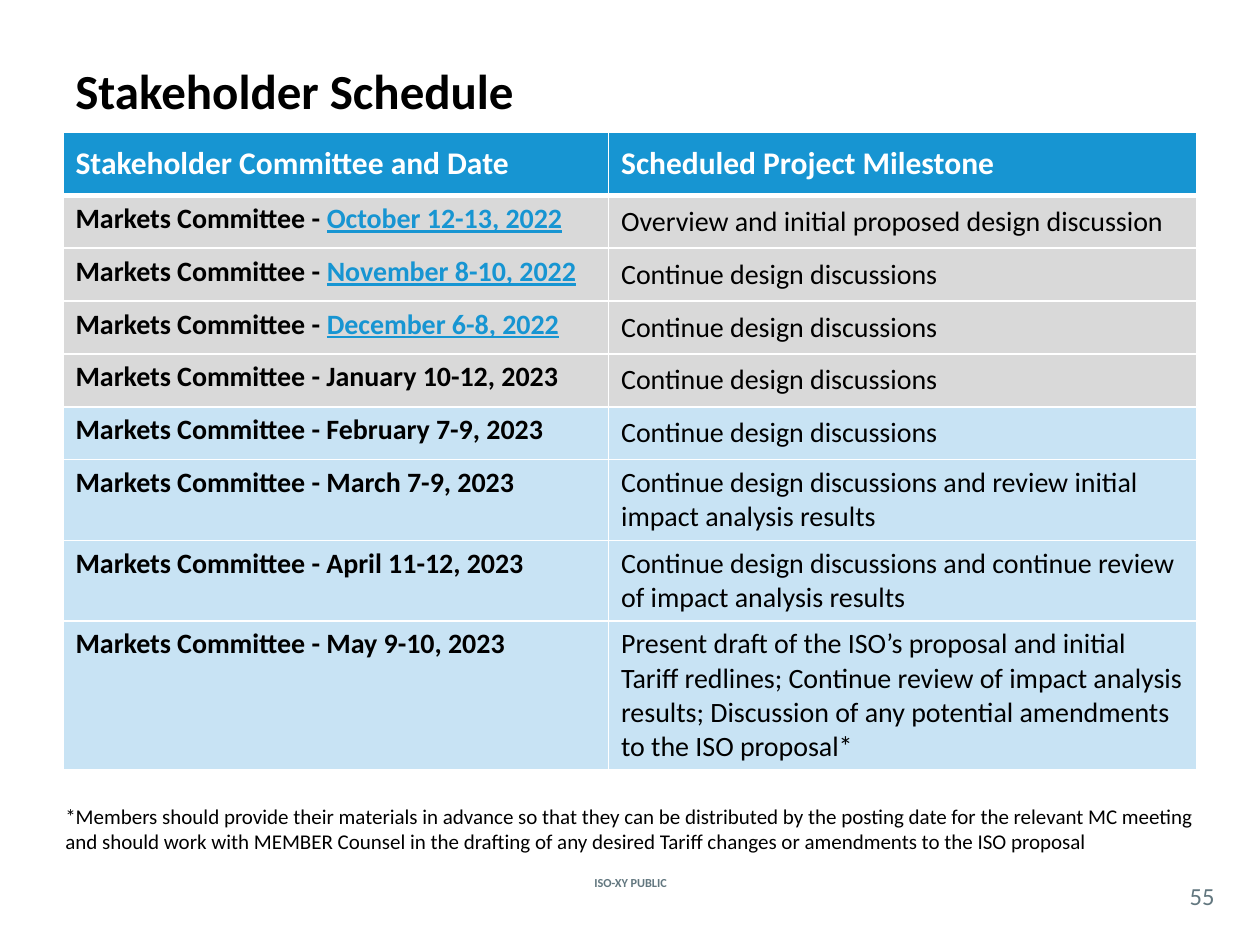
from lxml.etree import SubElement
from pptx import Presentation
from pptx.dml.color import RGBColor as Rgb
from pptx.enum.text import MSO_ANCHOR as Anchor, PP_ALIGN as Align
from pptx.oxml.ns import qn
from pptx.util import Inches, Pt

HUES = {
    "black": "000000", "white": "FFFFFF", "blue": "1795D2",
    "pale": "C8E3F4", "gray": "D9D9D9", "slate": "62777F",
}
HEADS = ["Stakeholder Committee and Date", "Scheduled Project Milestone"]
LEAD = "Markets Committee - "
TALK = "Continue design discussions"
ROWS = [
    ("October 12-13, 2022", "Overview and initial proposed design discussion", 0.42),
    ("November 8-10, 2022", TALK, 0.42),
    ("December 6-8, 2022", TALK, 0.42),
    ("January 10-12, 2023", TALK, 0.42),
    ("February 7-9, 2023", TALK, 0.42),
    ("March 7-9, 2023", TALK + " and review initial impact analysis results", 0.64),
    ("April 11-12, 2023", TALK + " and continue review of impact analysis results", 0.64),
    ("May 9-10, 2023", "Present draft of the ISO’s proposal and initial Tariff redlines; "
     "Continue review of impact analysis results; Discussion of any potential "
     "amendments to the ISO proposal*", 1.18),
]
LINKED, PAST = 3, 4
NOTE = (
    "*Members should provide their materials in advance so that they can be "
    "distributed by the posting date for the relevant MC meeting and should work "
    "with MEMBER Counsel in the drafting of any desired Tariff changes or "
    "amendments to the ISO proposal"
)


class Deck:
    face = "Calibri"

    def __init__(self, wide, high):
        self.prs = Presentation()
        self.prs.slide_width, self.prs.slide_height = Inches(wide), Inches(high)
        self.slide = self.prs.slides.add_slide(self.prs.slide_layouts[6])

    def run(self, para, text, size, hue="black", **form):
        run = para.add_run()
        run.text = text
        for key, value in {"name": self.face, "size": Pt(size), **form}.items():
            setattr(run.font, key, value)
        run.font.color.rgb = Rgb.from_string(HUES[hue])

    def text(self, spot, words, size, hue="black", align=Align.LEFT,
             anchor=Anchor.MIDDLE, inset=None, **form):
        frame = self.slide.shapes.add_textbox(*map(Inches, spot)).text_frame
        frame.word_wrap = True
        frame.vertical_anchor = anchor
        if inset is not None:
            for side in ("left", "top", "right", "bottom"):
                setattr(frame, "margin_" + side, Inches(inset))
        para = frame.paragraphs[0]
        para.alignment = align
        self.run(para, words, size, hue, **form)

    def grid(self, left, top, cols, rows):
        table = self.slide.shapes.add_table(
            len(rows), len(cols), Inches(left), Inches(top),
            Inches(sum(cols)), Inches(sum(rows))).table
        for col, wide in zip(table.columns, cols):
            col.width = Inches(wide)
        for row, high in zip(table.rows, rows):
            row.height = Inches(high)
        return table

    def cell(self, cell, fill, anchor, top=1, low=1):
        props = cell._tc.get_or_add_tcPr()
        for tag, width in {"lnL": 1, "lnR": 1, "lnT": top, "lnB": low}.items():
            line = SubElement(props, qn("a:" + tag), w=str(Pt(width)))
            paint = SubElement(line, qn("a:solidFill"))
            SubElement(paint, qn("a:srgbClr"), val=HUES["white"])
        cell.fill.solid()
        cell.fill.fore_color.rgb = Rgb.from_string(HUES[fill])
        cell.vertical_anchor = anchor
        return cell.text_frame.paragraphs[0]


def main():
    deck = Deck(10, 7.5)
    deck.text((4.27, 6.92, 1.47, 0.17), "ISO-XY PUBLIC", 7, "slate",
              Align.CENTER, bold=True)
    deck.text((0.5, 0.42, 9, 0.58), "Stakeholder Schedule", 28, bold=True)
    deck.text((9.33, 6.96, 0.42, 0.29), "55", 14, "slate", Align.CENTER, inset=0)

    table = deck.grid(0.5, 1.05, [4.33, 4.67], [0.5] + [row[2] for row in ROWS])
    for col, head in enumerate(HEADS):
        para = deck.cell(table.cell(0, col), "blue", Anchor.MIDDLE, low=3)
        deck.run(para, head, 18, "white", bold=True)
    for num, (date, goal, _) in enumerate(ROWS):
        fill = "gray" if num < PAST else "pale"
        top = 1 if num else 3
        para = deck.cell(table.cell(num + 1, 0), fill, Anchor.TOP, top)
        if num < LINKED:
            deck.run(para, LEAD, 16, bold=True)
            deck.run(para, date, 16, "blue", bold=True, underline=True)
        else:
            deck.run(para, LEAD + date, 16, bold=True)
        para = deck.cell(table.cell(num + 1, 1), fill, Anchor.MIDDLE, top)
        deck.run(para, goal, 16, bold=False)

    deck.text((0.42, 6.33, 9.25, 0.5), NOTE, 12, anchor=Anchor.TOP)
    deck.prs.save("out.pptx")


if __name__ == "__main__":
    main()
